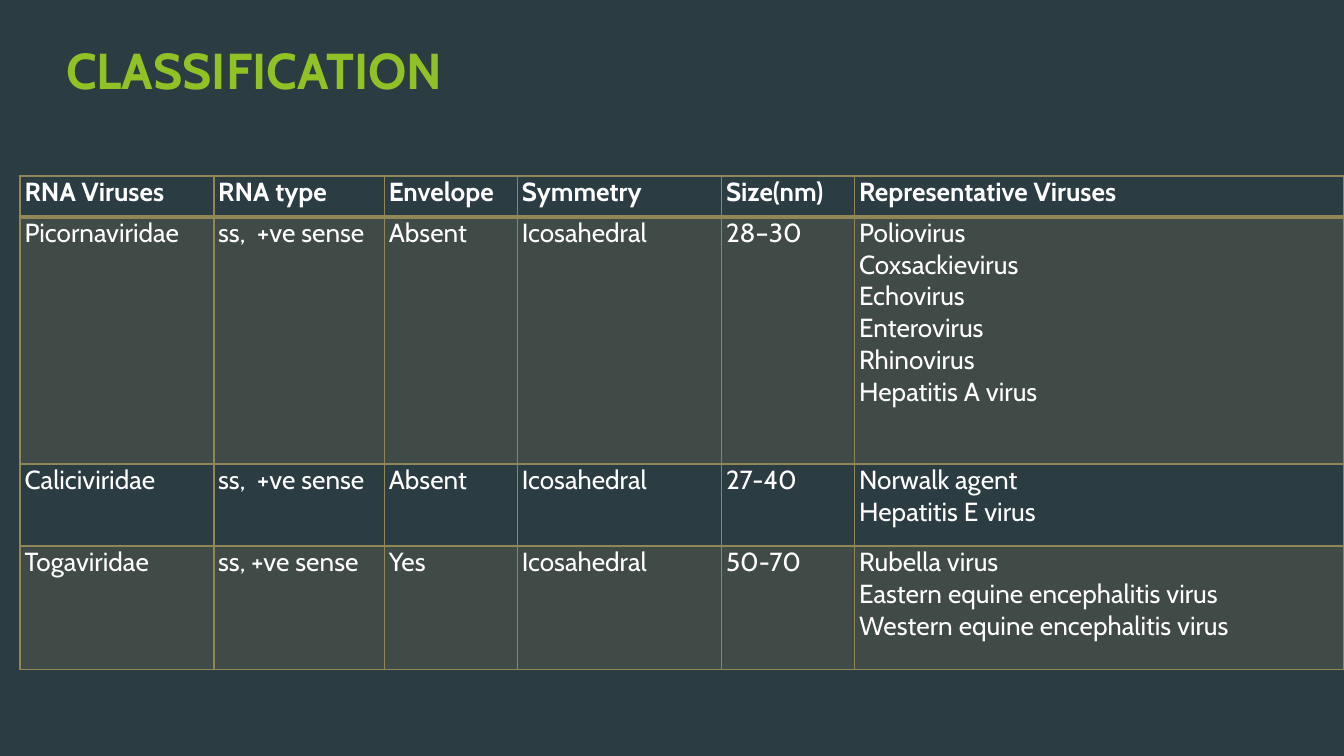
from lxml import etree
from pptx import Presentation
from pptx.dml.color import RGBColor
from pptx.enum.text import MSO_ANCHOR, MSO_AUTO_SIZE, PP_ALIGN
from pptx.oxml.ns import qn
from pptx.util import Pt

TOP, LEFT, NO_FIT = MSO_ANCHOR.TOP, PP_ALIGN.LEFT, MSO_AUTO_SIZE.NONE

# Content
TITLE = "CLASSIFICATION"
HEADER = ["RNA Viruses", "RNA type", "Envelope", "Symmetry", "Size(nm)",
          "Representative Viruses"]
FAMILIES = [
    ["Picornaviridae", "ss,  +ve sense", "Absent", "Icosahedral", "28–30",
     ["Poliovirus", "Coxsackievirus", "Echovirus", "Enterovirus",
      "Rhinovirus", "Hepatitis A virus"]],
    ["Caliciviridae", "ss,  +ve sense", "Absent", "Icosahedral", "27-40",
     ["Norwalk agent", "Hepatitis E virus"]],
    ["Togaviridae", "ss, +ve sense", "Yes", "Icosahedral", "50-70",
     ["Rubella virus", "Eastern equine encephalitis virus",
      "Western equine encephalitis virus"]],
]

# Look and layout
FONT = "Cabin"
BACKGROUND = RGBColor(0x2C, 0x3C, 0x43)
GREEN = RGBColor(0x90, 0xC2, 0x26)
GOLD = RGBColor(0x91, 0x86, 0x55)
WHITE = RGBColor(0xFF, 0xFF, 0xFF)
COL_WIDTHS = [103.7, 91.4, 71.3, 109.4, 71.3, 262.1]
ROW_HEIGHTS = [22, 132.3, 44, 66]
THIN, THICK = 1, 2
BAND_OPACITY = 20


def add_run(p, text, size, color, bold):
    r = p.add_run()
    r.text = text
    r.font.name = FONT
    r.font.size = Pt(size)
    r.font.bold = bold
    r.font.color.rgb = color


def set_borders(cell, widths):
    tc_pr = cell._tc.get_or_add_tcPr()
    for side, width in widths.items():
        ln = etree.SubElement(tc_pr, qn(f"a:ln{side}"), w=str(Pt(width)))
        fill = etree.SubElement(ln, qn("a:solidFill"))
        etree.SubElement(fill, qn("a:srgbClr"), val=str(GOLD))


def set_band(cell):
    cell.fill.solid()
    cell.fill.fore_color.rgb = GOLD
    color = cell._tc.tcPr.find(f"{qn('a:solidFill')}/{qn('a:srgbClr')}")
    etree.SubElement(color, qn("a:alpha"), val=str(BAND_OPACITY * 1000))


def fill_cell(cell, content, row):
    cell.margin_left = cell.margin_right = Pt(2.4)
    cell.margin_top = cell.margin_bottom = 0
    cell.vertical_anchor = TOP
    # The rule under the header is shared by the first two rows
    set_borders(cell, {"L": THIN, "R": THIN,
                       "T": THICK if row == 1 else THIN,
                       "B": THICK if row == 0 else THIN})
    if row % 2:
        set_band(cell)
    else:
        cell.fill.background()
    lines = content if isinstance(content, list) else [content]
    tf = cell.text_frame
    for i, line in enumerate(lines):
        p = tf.add_paragraph() if i else tf.paragraphs[0]
        add_run(p, line, 14, WHITE, row == 0)


prs = Presentation()
prs.slide_width, prs.slide_height = Pt(720), Pt(405)
s = prs.slides.add_slide(prs.slide_layouts[5])
s.background.fill.solid()
s.background.fill.fore_color.rgb = BACKGROUND

# Title
sp = s.shapes.title
sp.left, sp.top, sp.width, sp.height = Pt(23), Pt(16.6), Pt(507.6), Pt(77.8)
tf = sp.text_frame
tf.auto_size = NO_FIT
tf.word_wrap = True
tf.vertical_anchor = TOP
tf.margin_left, tf.margin_top = Pt(12.4), Pt(4.5)
p = tf.paragraphs[0]
p.alignment = LEFT
add_run(p, TITLE, 27, GREEN, True)

# Classification table
rows = [HEADER] + FAMILIES
table = s.shapes.add_table(len(rows), len(HEADER), Pt(10.8), Pt(94.3),
                           Pt(sum(COL_WIDTHS)), Pt(sum(ROW_HEIGHTS))).table
table.first_row = table.horz_banding = False
for column, width in zip(table.columns, COL_WIDTHS):
    column.width = Pt(width)
for i, (height, contents) in enumerate(zip(ROW_HEIGHTS, rows)):
    table.rows[i].height = Pt(height)
    for j, content in enumerate(contents):
        fill_cell(table.cell(i, j), content, i)

prs.save("out.pptx")
